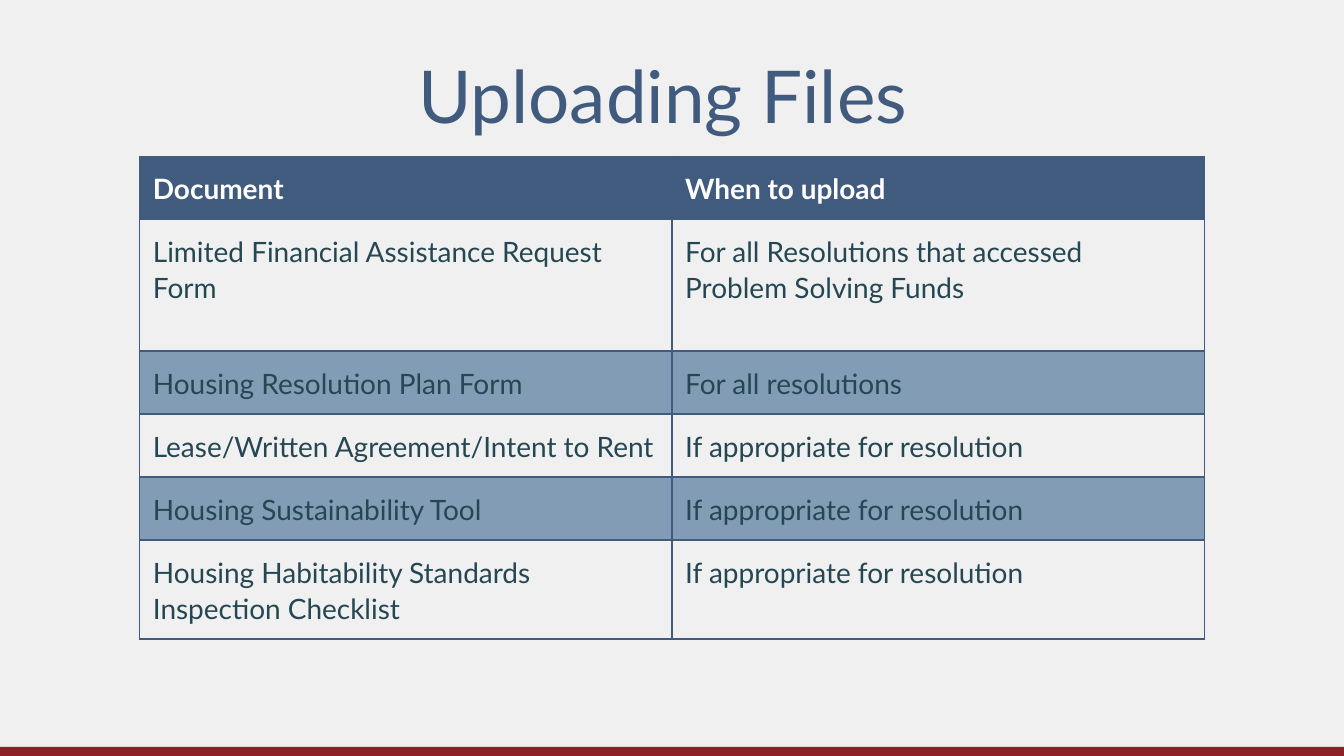
"""Build the slide that lists which documents to upload and when."""
from dataclasses import dataclass

from lxml.etree import SubElement
from pptx import Presentation
from pptx.dml.color import RGBColor
from pptx.enum.shapes import MSO_SHAPE
from pptx.enum.text import MSO_ANCHOR, PP_ALIGN
from pptx.oxml.ns import qn
from pptx.util import Cm, Pt


@dataclass(frozen=True)
class Theme:
    font: str = "Lato"
    paper: str = "F0F0F0"
    navy: str = "405B7D"
    band: str = "839CB5"
    ink: str = "254753"
    white: str = "FFFFFF"
    red: str = "902027"
    title_size: float = 39
    body_size: float = 15
    border_width: float = 0.75


THEME = Theme()
WIDTH, HEIGHT = 25.4, 14.28
BAR_HEIGHT = 0.17
ROWS = [
    ("Document", "When to upload"),
    ("Limited Financial Assistance Request Form",
     "For all Resolutions that accessed Problem Solving Funds"),
    ("Housing Resolution Plan Form", "For all resolutions"),
    ("Lease/Written Agreement/Intent to Rent", "If appropriate for resolution"),
    ("Housing Sustainability Tool", "If appropriate for resolution"),
    ("Housing Habitability Standards Inspection Checklist",
     "If appropriate for resolution"),
]
ROW_HEIGHTS = [1.19, 2.49, 1.19, 1.19, 1.19, 1.87]


def write(frame, text, *, size, color, bold=False, align=PP_ALIGN.LEFT, spacing=1.0):
    para = frame.paragraphs[0]
    para.alignment = align
    para.line_spacing = spacing
    span = para.add_run()
    span.text = text
    span.font.name = THEME.font
    span.font.size = Pt(size)
    span.font.bold = bold
    span.font.color.rgb = RGBColor.from_string(color)


def set_margins(target, margin):
    target.margin_left = target.margin_right = Cm(margin)
    target.margin_top = target.margin_bottom = Cm(margin)


class SlideBuilder:
    def __init__(self, page, theme):
        self.page = page
        self.theme = theme

    def background(self):
        fill = self.page.background.fill
        fill.solid()
        fill.fore_color.rgb = RGBColor.from_string(self.theme.paper)

    def bar(self, left, top, width, height):
        box = self.page.shapes.add_shape(
            MSO_SHAPE.RECTANGLE, Cm(left), Cm(top), Cm(width), Cm(height))
        box.shadow.inherit = False
        box.fill.solid()
        box.fill.fore_color.rgb = RGBColor.from_string(self.theme.red)
        box.line.fill.background()

    def title(self, text, left, top, width, height):
        box = self.page.shapes.add_textbox(Cm(left), Cm(top), Cm(width), Cm(height))
        frame = box.text_frame
        frame.word_wrap = True
        frame.vertical_anchor = MSO_ANCHOR.MIDDLE
        set_margins(frame, 0.16)
        write(frame, text, size=self.theme.title_size, color=self.theme.navy,
              align=PP_ALIGN.CENTER)

    def table(self, rows, heights, left, top, width):
        table = self.page.shapes.add_table(
            len(rows), len(rows[0]), Cm(left), Cm(top), Cm(width), Cm(sum(heights))).table
        table.horz_banding = False
        for row, height in zip(table.rows, heights):
            row.height = Cm(height)
        for index, texts in enumerate(rows):
            header = index == 0
            stripe = self.theme.paper if index % 2 else self.theme.band
            for column, text in enumerate(texts):
                cell = table.cell(index, column)
                self.cell_style(cell, self.theme.navy if header else stripe)
                write(cell.text_frame, text, size=self.theme.body_size, bold=header,
                      color=self.theme.white if header else self.theme.ink, spacing=1.08)

    def cell_style(self, cell, color):
        set_margins(cell, 0.25)
        properties = cell._tc.get_or_add_tcPr()
        for side in ("a:lnL", "a:lnR", "a:lnT", "a:lnB"):
            line = SubElement(properties, qn(side), w=str(Pt(self.theme.border_width)))
            solid = SubElement(line, qn("a:solidFill"))
            SubElement(solid, qn("a:srgbClr"), val=self.theme.navy)
        cell.fill.solid()
        cell.fill.fore_color.rgb = RGBColor.from_string(color)


def main():
    deck = Presentation()
    deck.slide_width, deck.slide_height = Cm(WIDTH), Cm(HEIGHT)
    builder = SlideBuilder(deck.slides.add_slide(deck.slide_layouts[6]), THEME)
    builder.background()
    builder.bar(0, HEIGHT - BAR_HEIGHT, WIDTH, BAR_HEIGHT)
    builder.title("Uploading Files ", 1.27, 0.58, 22.86, 2.39)
    builder.table(ROWS, ROW_HEIGHTS, 2.64, 2.95, 20.12)
    deck.save("out.pptx")


if __name__ == "__main__":
    main()
